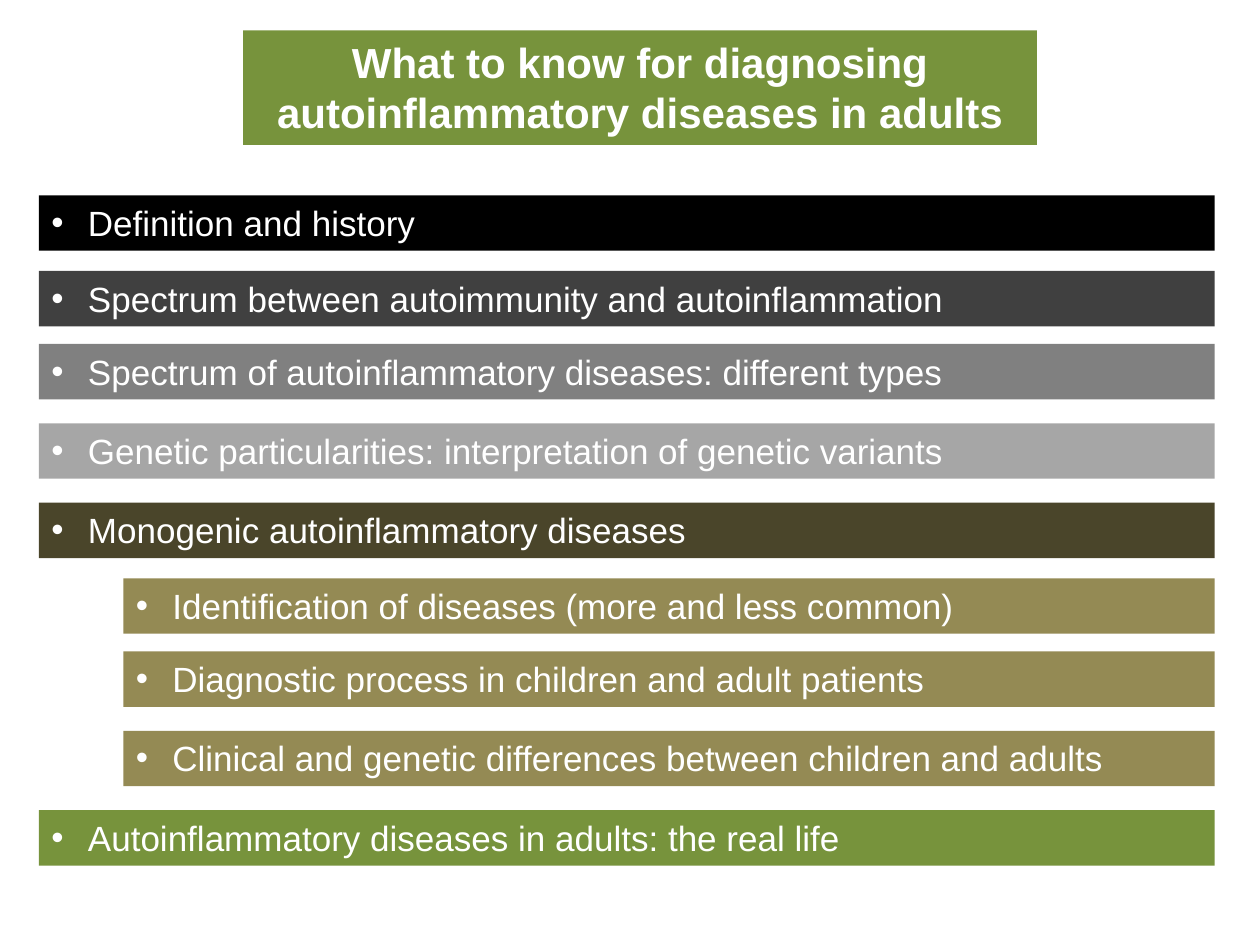
from lxml import etree
from pptx import Presentation
from pptx.dml.color import RGBColor
from pptx.enum.shapes import MSO_SHAPE
from pptx.enum.text import MSO_ANCHOR, MSO_AUTO_SIZE, PP_ALIGN
from pptx.oxml.ns import qn
from pptx.util import Inches, Pt

RECTANGLE = MSO_SHAPE.RECTANGLE
TOP = MSO_ANCHOR.TOP
NO_AUTOFIT = MSO_AUTO_SIZE.NONE
LEFT = PP_ALIGN.LEFT
CENTER = PP_ALIGN.CENTER

WHITE = RGBColor(0xFF, 0xFF, 0xFF)
BLACK = RGBColor(0x00, 0x00, 0x00)
DARK_GRAY = RGBColor(0x40, 0x40, 0x40)
MID_GRAY = RGBColor(0x80, 0x80, 0x80)
LIGHT_GRAY = RGBColor(0xA6, 0xA6, 0xA6)
DARK_OLIVE = RGBColor(0x4A, 0x45, 0x2A)
TAN = RGBColor(0x94, 0x8A, 0x54)
GREEN = RGBColor(0x77, 0x93, 0x3C)

FONT = "Arial"
RIGHT_EDGE = 9.64
BAR_HEIGHT = 0.44
LEVEL_LEFTS = (0.31, 0.98)
BULLET_INDENT = Inches(0.29)

TOPICS = [
    (1.55, 0, BLACK, "Definition and history"),
    (2.15, 0, DARK_GRAY, "Spectrum between autoimmunity and autoinflammation"),
    (2.73, 0, MID_GRAY, "Spectrum of autoinflammatory diseases: different types"),
    (3.36, 0, LIGHT_GRAY, "Genetic particularities: interpretation of genetic variants"),
    (3.99, 0, DARK_OLIVE, "Monogenic autoinflammatory diseases"),
    (4.59, 1, TAN, "Identification of diseases (more and less common)"),
    (5.17, 1, TAN, "Diagnostic process in children and adult patients"),
    (5.80, 1, TAN, "Clinical and genetic differences between children and adults"),
    (6.43, 0, GREEN, "Autoinflammatory diseases in adults: the real life"),
]


def fill_with_text(shape, color, text, size, alignment, bold=False):
    shape.fill.solid()
    shape.fill.fore_color.rgb = color
    shape.line.fill.background()
    frame = shape.text_frame
    frame.text = text
    frame.word_wrap = True
    frame.auto_size = NO_AUTOFIT
    frame.vertical_anchor = TOP
    paragraph = frame.paragraphs[0]
    paragraph.alignment = alignment
    font = paragraph.runs[0].font
    font.name = FONT
    font.size = Pt(size)
    font.bold = bold
    font.color.rgb = WHITE
    return paragraph


def add_bullet(paragraph):
    properties = paragraph._p.get_or_add_pPr()
    properties.set("marL", str(BULLET_INDENT))
    properties.set("indent", str(-BULLET_INDENT))
    etree.SubElement(properties, qn("a:buFont"), typeface=FONT)
    etree.SubElement(properties, qn("a:buChar"), char="•")


def place_title(slide, left, top, width, height):
    title = slide.shapes.title
    title.left, title.top = left, top
    title.width, title.height = width, height
    text = "What to know for diagnosing autoinflammatory diseases in adults"
    fill_with_text(title, GREEN, text, 24, CENTER, bold=True)


def add_topic_bar(slide, left, top, width, height, color, text):
    bar = slide.shapes.add_shape(RECTANGLE, left, top, width, height)
    bar.shadow.inherit = False
    add_bullet(fill_with_text(bar, color, text, 20, LEFT))


def main():
    presentation = Presentation()
    presentation.slide_width = Inches(10)
    presentation.slide_height = Inches(7.5)
    slide = presentation.slides.add_slide(presentation.slide_layouts[5])
    place_title(slide, Inches(1.93), Inches(0.24), Inches(6.3), Inches(0.91))
    for top, level, color, text in TOPICS:
        left = LEVEL_LEFTS[level]
        add_topic_bar(slide, Inches(left), Inches(top), Inches(RIGHT_EDGE - left),
                      Inches(BAR_HEIGHT), color, text)
    presentation.save("out.pptx")


if __name__ == "__main__":
    main()
